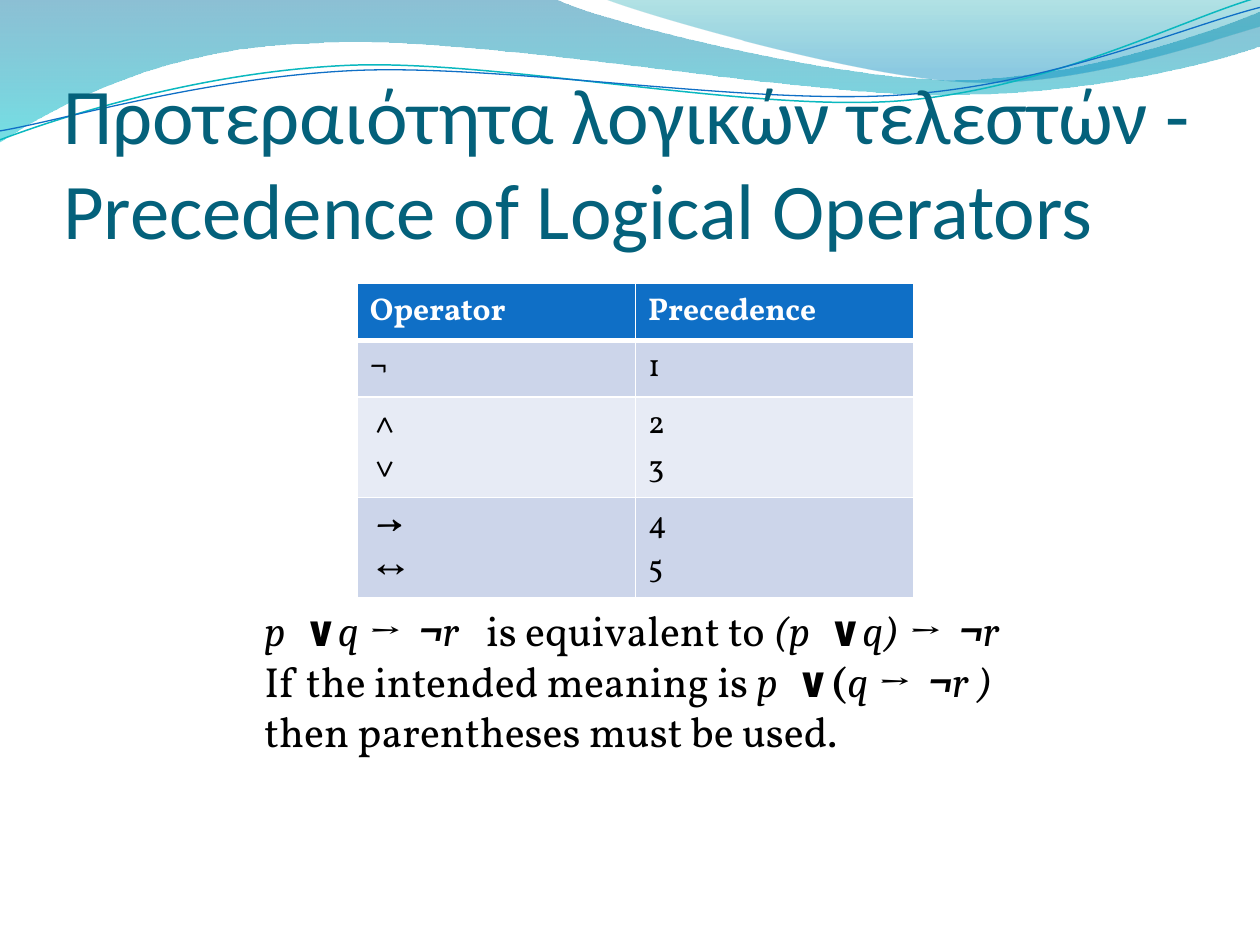
import dataclasses

import pptx
import pptx.dml.color
import pptx.enum.text
import pptx.oxml
import pptx.oxml.ns
import pptx.util
from pptx.util import Cm, Pt


@dataclasses.dataclass(frozen=True)
class Theme:
    title_font: str = "Calibri"
    body_font: str = "Vollkorn"
    formula_font: str = "Cambria"
    title_size: int = 45
    table_size: int = 18
    note_size: int = 24
    title: str = "04617B"
    text: str = "000000"
    white: str = "FFFFFF"
    header: str = "0F6FC6"
    bands: tuple = ("CCD5EA", "E7EBF5")
    lower_wave: tuple = ((0, "0074A1", 45), (1, "00C6CF", 55))
    upper_wave: tuple = ((0, "00A1A9", 30), (0.8, "008BBF", 45))
    teal_line: str = "0AB8BF"
    blue_line: str = "0F6FC6"


THEME = Theme()

LOWER_WAVE = [
    (0, 0), (11.18, -0.03),
    (12.09, 0.43, 16.87, 1.6, 19.25, 1.6),
    (21.67, 1.6, 24.33, 0.66, 25.4, 0.23),
    (25.43, 0.91),
    (24.97, 1.12, 22.1, 1.93, 18.95, 1.91),
    (15.8, 1.91, 9.7, 0.71, 6.53, 0.86),
    (3.28, 0.91, 1.17, 2.11, -0.03, 2.87),
]
UPPER_WAVE = [
    (12.17, -0.03),
    (12.93, 0.28, 17.32, 1.57, 19.53, 1.65),
    (21.74, 1.75, 24.41, 0.81, 25.4, 0.53),
    (25.4, 0),
]
TEAL_CURVE = [
    (-0.05, 2.22),
    (1.19, 1.82, 4.02, 1.04, 7.05, 1.05),
    (10.04, 1.07, 15.02, 2.37, 18.08, 2.29),
    (21.13, 2.2, 23.87, 0.91, 25.41, 0.55),
]
BLUE_CURVE = [
    (-0.04, 2.04),
    (1.16, 1.9, 4.18, 1.15, 7.2, 1.16),
    (10.25, 1.18, 15.13, 2.25, 18.18, 2.17),
    (21.21, 2.1, 23.93, 1.06, 25.45, 0.75),
]
CURVE_ROTATION = 357.3

ROWS = [
    (["Operator"], ["Precedence"]),
    (["¬"], ["1"]),
    ([" ∧", " ∨"], ["2", "3"]),
    ([" →", " ↔"], ["4", "5"]),
]
ROW_HEIGHTS = (0.99, 0.99, 1.75, 1.75)

PLAIN, ITALIC, BOLD, BOTH = "plain", "italic", "bold", "both"
NOTES = [
    [("p  ", ITALIC), ("∨", BOLD), ("q ", ITALIC), ("→  ¬", BOTH), ("r   ", ITALIC),
     ("is equivalent to ", PLAIN), ("(p  ", ITALIC), ("∨", BOLD), ("q)", ITALIC),
     (" →  ¬", BOTH), ("r", ITALIC)],
    [("If the intended meaning is ", PLAIN), ("p  ", ITALIC), ("∨(", BOLD),
     ("q ", ITALIC), ("→  ¬", BOTH), ("r )", ITALIC)],
    [("then parentheses must be used.", PLAIN)],
]


def rgb(value):
    return pptx.dml.color.RGBColor.from_string(value)


def add_outline(shapes, left, top, segments, close):
    points = [(Cm(left + segment[i]), Cm(top + segment[i + 1]))
              for segment in segments for i in range(0, len(segment), 2)]
    builder = shapes.build_freeform(*points[0])
    builder.add_line_segments(points[1:], close=close)
    shape = builder.convert_to_shape()
    shape.shadow.inherit = False
    lines = iter(list(shape.element.iter(pptx.oxml.ns.qn("a:lnTo"))))
    for segment in segments[1:]:
        steps = [next(lines) for _ in range(len(segment) // 2)]
        if len(steps) == 3:
            curve = pptx.oxml.parse_xml(f'<a:cubicBezTo {pptx.oxml.ns.nsdecls("a")}/>')
            steps[0].addprevious(curve)
            for step in steps:
                curve.append(step[0])
                step.getparent().remove(step)
    return shape


def add_waves(page, left, top):
    for segments, stops in ((LOWER_WAVE, THEME.lower_wave), (UPPER_WAVE, THEME.upper_wave)):
        wave = add_outline(page.shapes, left, top, segments, True)
        wave.line.fill.background()
        wave.fill.gradient()
        wave.fill.gradient_angle = 270
        for stop, (position, color, _) in zip(wave.fill.gradient_stops, stops):
            stop.position = position
            stop.color.rgb = rgb(color)
        tag = pptx.oxml.ns.qn("a:srgbClr")
        for node, (_, _, opacity) in zip(wave.element.spPr.iter(tag), stops):
            node.append(pptx.oxml.parse_xml(
                f'<a:alpha {pptx.oxml.ns.nsdecls("a")} val="{opacity * 1000}"/>'))
    group = page.shapes.add_group_shape()
    for segments, color, width in ((TEAL_CURVE, THEME.teal_line, 0.85),
                                   (BLUE_CURVE, THEME.blue_line, 0.75)):
        curve = add_outline(group.shapes, left, top, segments, False)
        curve.rotation = CURVE_ROTATION
        curve.fill.background()
        curve.line.color.rgb = rgb(color)
        curve.line.width = Pt(width)


def add_title(page, left, top, width, height):
    title = page.shapes.title
    title.element.getparent().append(title.element)
    title.left, title.top, title.width, title.height = map(Cm, (left, top, width, height))
    frame = title.text_frame
    frame.text = "Προτεραιότητα λογικών τελεστών - Precedence of Logical Operators"
    frame.word_wrap = True
    frame.auto_size = pptx.enum.text.MSO_AUTO_SIZE.NONE
    frame.vertical_anchor = pptx.enum.text.MSO_ANCHOR.BOTTOM
    frame.margin_left = frame.margin_right = frame.margin_bottom = 0
    para = frame.paragraphs[0]
    para.alignment = pptx.enum.text.PP_ALIGN.LEFT
    style_font(para.font, THEME.title_font, THEME.title_size, THEME.title)


def style_font(font, name, size, color, bold=False, italic=False):
    font.name, font.size, font.bold, font.italic = name, Pt(size), bold, italic
    font.color.rgb = rgb(color)


def add_borders(cell, bottom):
    properties = cell._tc.get_or_add_tcPr()
    for index, (side, width) in enumerate((("L", 1), ("R", 1), ("T", 1), ("B", bottom))):
        properties.insert(index, pptx.oxml.parse_xml(
            f'<a:ln{side} {pptx.oxml.ns.nsdecls("a")} w="{Pt(width)}"><a:solidFill>'
            f'<a:srgbClr val="{THEME.white}"/></a:solidFill></a:ln{side}>'))


def add_precedence_table(page, left, top, width):
    frame = page.shapes.add_table(len(ROWS), 2, Cm(left), Cm(top), Cm(width),
                                  Cm(sum(ROW_HEIGHTS)))
    table = frame.table
    for row, (contents, height) in enumerate(zip(ROWS, ROW_HEIGHTS)):
        table.rows[row].height = Cm(height)
        is_header = row == 0
        for column, lines in enumerate(contents):
            cell = table.cell(row, column)
            cell.fill.solid()
            cell.fill.fore_color.rgb = rgb(THEME.header if is_header
                                           else THEME.bands[(row - 1) % 2])
            add_borders(cell, 3 if is_header else 1)
            cell.text_frame.text = "\n".join(lines)
            for para in cell.text_frame.paragraphs:
                bold = is_header or (column == 0 and para.text != " ↔")
                style_font(para.font, THEME.body_font, THEME.table_size,
                           THEME.white if is_header else THEME.text, bold)


def add_notes(page, left, top, width, height):
    box = page.shapes.add_textbox(*map(Cm, (left, top, width, height)))
    frame = box.text_frame
    frame.word_wrap = True
    for index, pieces in enumerate(NOTES):
        para = frame.add_paragraph() if index else frame.paragraphs[0]
        for text, style in pieces:
            span = para.add_run()
            span.text = text
            name = THEME.body_font if style == PLAIN else THEME.formula_font
            style_font(span.font, name, THEME.note_size, THEME.text,
                       style in (BOLD, BOTH), style in (ITALIC, BOTH))


def main():
    deck = pptx.Presentation()
    deck.slide_width, deck.slide_height = Cm(25.4), Cm(19.05)
    page = deck.slides.add_slide(deck.slide_layouts.get_by_name("Title Only"))
    add_waves(page, 0, 0)
    add_title(page, 1.27, 1.96, 22.86, 3.18)
    add_precedence_table(page, 7.2, 5.72, 11.22)
    add_notes(page, 5.08, 12.07, 15.88, 5.38)
    deck.save("out.pptx")


if __name__ == "__main__":
    main()
